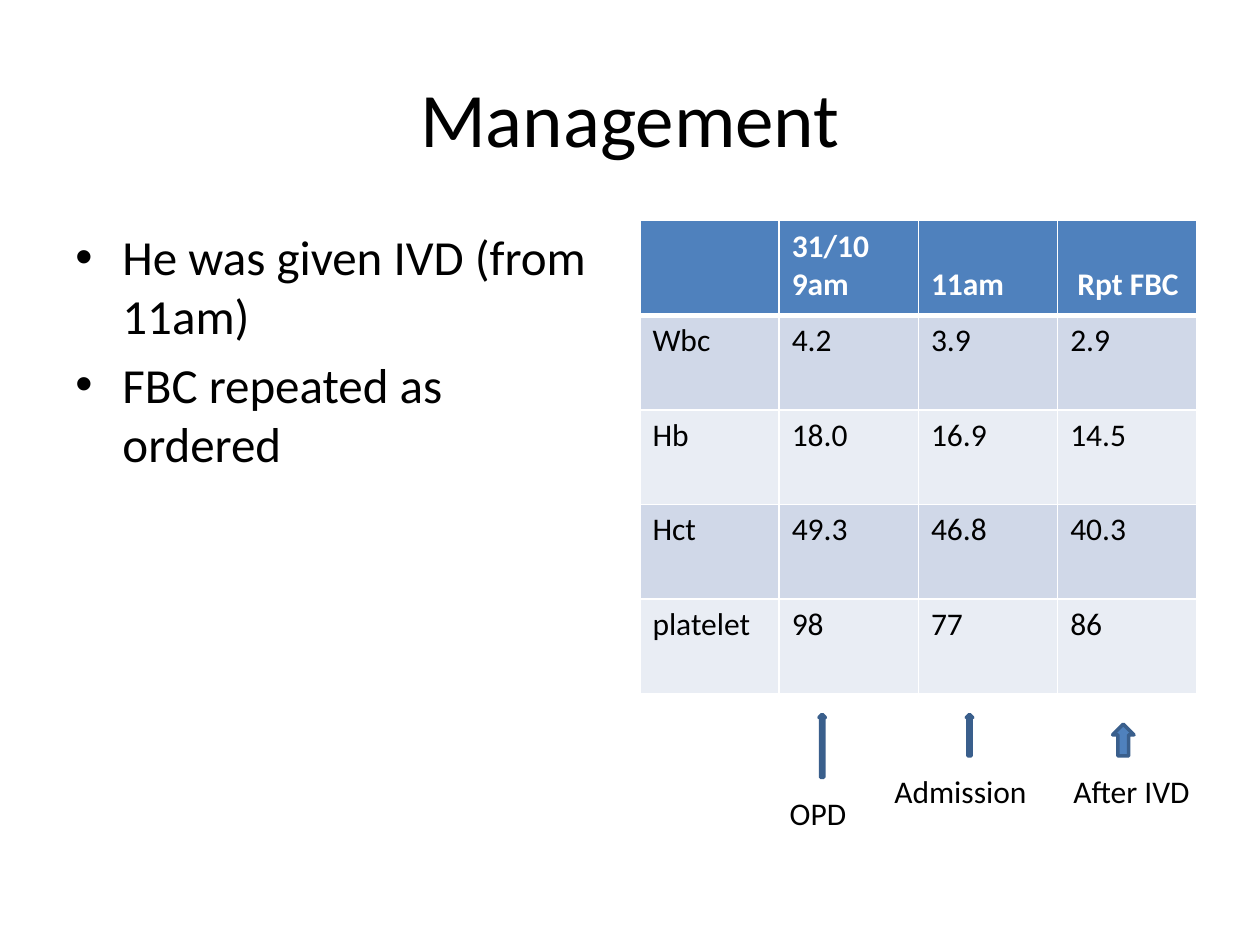
from lxml import etree
from pptx import Presentation, util as u
from pptx.dml.color import RGBColor
from pptx.enum import shapes, text
from pptx.oxml.ns import qn

Cm, Pt = u.Cm, u.Pt
HUES = {"ink": "000000", "white": "FFFFFF", "blue": "4F81BD",
        "edge": "3A5F8C", "dark": "D0D8E8", "light": "E9EDF4"}
ROWS = [["", "31/10 9am", "11am", " Rpt FBC"],
        ["Wbc", "4.2", "3.9", "2.9"],
        ["Hb", "18.0", "16.9", "14.5"],
        ["Hct", "49.3", "46.8", "40.3"],
        ["platelet", "98", "77", "86"]]
NOTES = [("OPD", 15.67, 15.88, 1.9),
         ("Admission", 17.78, 15.44, 3.18),
         ("After IVD", 21.39, 15.44, 3.38)]
ARROWS = [(16.51, 14.4, 0.13, 1.27),
          (19.48, 14.4, 0.13, 0.84),
          (22.43, 14.6, 0.43, 0.64)]


def hue(name):
    return RGBColor.from_string(HUES[name])


def style(item, form):
    for key, value in form.items():
        setattr(item, key, value)


def paint(fill, name):
    fill.solid()
    fill.fore_color.rgb = hue(name)


def write(par, words, size, color="ink", bold=False):
    run = par.add_run()
    run.text = words
    style(run.font, {"name": "Calibri", "size": Pt(size), "bold": bold})
    run.font.color.rgb = hue(color)


def add_box(slide, area, lines, size, form=None):
    """Add a text box with one paragraph per line and return its paragraphs."""
    frame = slide.shapes.add_textbox(*map(Cm, area)).text_frame
    style(frame, {"word_wrap": True, **(form or {})})
    for n, line in enumerate(lines):
        par = frame.add_paragraph() if n else frame.paragraphs[0]
        write(par, line, size)
    return frame.paragraphs


def add_bullet(par):
    props = par._p.get_or_add_pPr()
    indent = Cm(0.95)
    props.set("marL", str(indent))
    props.set("indent", str(-indent))
    etree.SubElement(props, qn("a:buFont")).set("typeface", "Arial")
    etree.SubElement(props, qn("a:buChar")).set("char", "•")


def add_edges(cell, widths):
    """Draw white borders from a dict of side letter to width in points."""
    props = cell._tc.get_or_add_tcPr()
    for n, (side, width) in enumerate(widths.items()):
        line = etree.Element(qn(f"a:ln{side}"), w=str(Pt(width)))
        fill = etree.SubElement(line, qn("a:solidFill"))
        etree.SubElement(fill, qn("a:srgbClr")).set("val", HUES["white"])
        props.insert(n, line)


def add_grid(slide):
    table = slide.shapes.add_table(
        len(ROWS), len(ROWS[0]), *map(Cm, (12.9, 4.45, 11.23, 9.53))).table
    for r, row in enumerate(ROWS):
        head = r == 0
        back = "blue" if head else "dark" if r % 2 else "light"
        for c, words in enumerate(row):
            cell = table.cell(r, c)
            paint(cell.fill, back)
            add_edges(cell, {"L": 1, "R": 1, "T": 3 if r == 1 else 1,
                             "B": 3 if head else 1})
            if head:
                style(cell, {"vertical_anchor": text.MSO_ANCHOR.BOTTOM,
                             "margin_bottom": Cm(0.23)})
            if words:
                write(cell.text_frame.paragraphs[0], words, 18,
                      "white" if head else "ink", head)


def add_arrow(slide, area):
    arrow = slide.shapes.add_shape(shapes.MSO_SHAPE.UP_ARROW, *map(Cm, area))
    arrow.shadow.inherit = False
    paint(arrow.fill, "blue")
    paint(arrow.line.fill, "edge")
    arrow.line.width = Pt(2)


def main():
    deck = Presentation()
    style(deck, {"slide_width": Cm(25.4), "slide_height": Cm(19.05)})
    slide = deck.slides.add_slide(deck.slide_layouts[6])
    title = add_box(slide, (1.27, 0.76, 22.86, 3.18), ["Management"], 44,
                    {"vertical_anchor": text.MSO_ANCHOR.MIDDLE})
    title[0].alignment = text.PP_ALIGN.CENTER
    points = ["He was given IVD (from 11am)", "FBC repeated as ordered"]
    for par in add_box(slide, (1.27, 4.45, 11.23, 12.57), points, 28):
        par.space_before = Pt(5.6)
        add_bullet(par)
    add_grid(slide)
    for words, left, top, width in NOTES:
        add_box(slide, (left, top, width, 1.02), [words], 18)
    for area in ARROWS:
        add_arrow(slide, area)
    deck.save("out.pptx")


if __name__ == "__main__":
    main()
